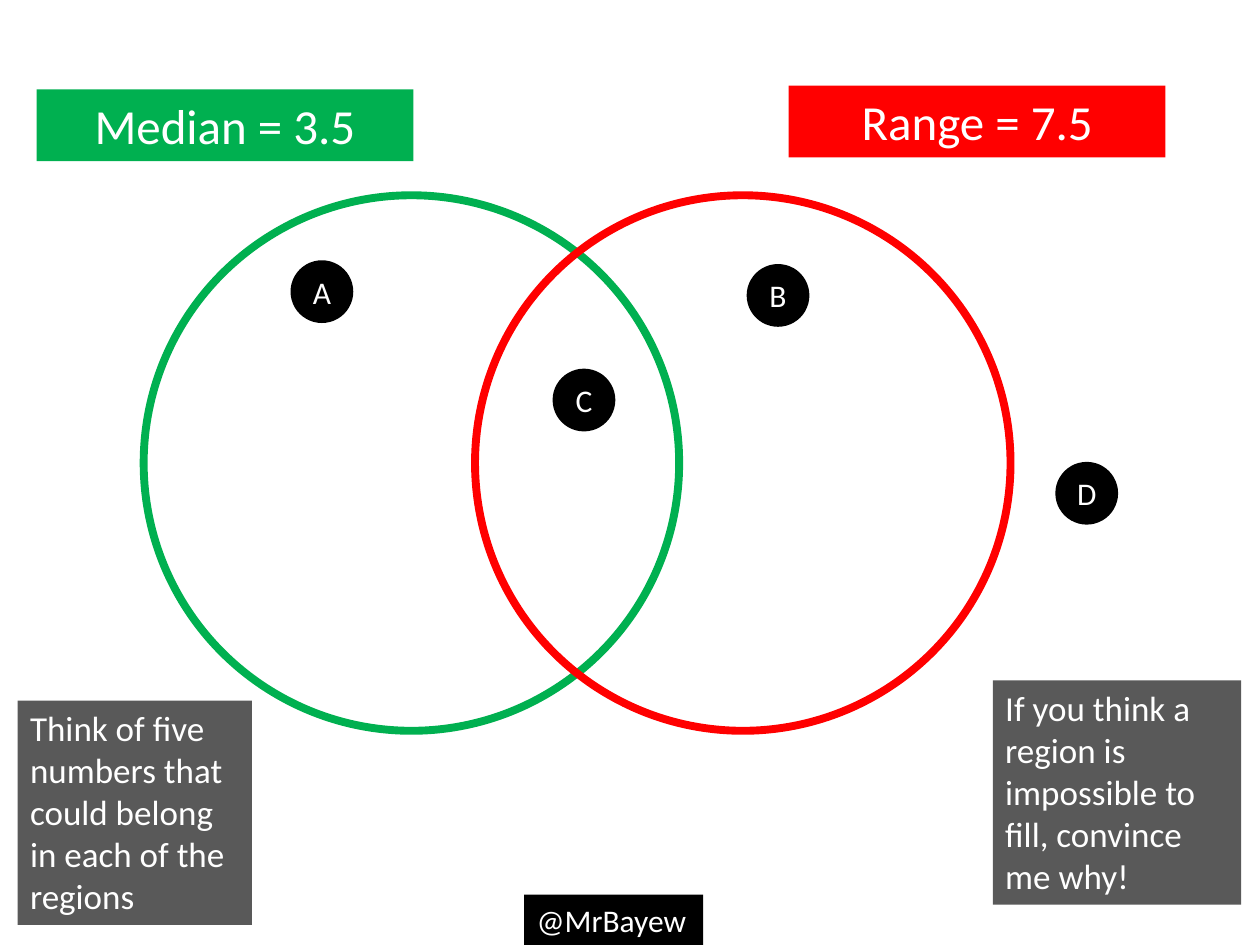
from collections import namedtuple

from pptx import Presentation
from pptx.dml.color import RGBColor
from pptx.enum.shapes import MSO_SHAPE
from pptx.enum.text import MSO_ANCHOR, MSO_AUTO_SIZE, PP_ALIGN
from pptx.util import Inches, Pt

WHITE = RGBColor(0xFF, 0xFF, 0xFF)
BLACK = RGBColor(0, 0, 0)
GREEN = RGBColor(0, 0xB0, 0x50)
RED = RGBColor(0xFF, 0, 0)
GREY = RGBColor(0x59, 0x59, 0x59)

# The slide is a grid of 100 columns by 75 rows of square cells.
COLUMNS, ROWS = 100, 75
CELL = Inches(0.1)
FONT = "Calibri"

Box = namedtuple("Box", "left top width height")


def to_lengths(box):
    return [round(value * CELL) for value in box]


def write_text(shape, text, size, alignment, wrap=True):
    frame = shape.text_frame
    frame.word_wrap = wrap
    frame.auto_size = MSO_AUTO_SIZE.SHAPE_TO_FIT_TEXT
    frame.vertical_anchor = MSO_ANCHOR.TOP
    paragraph = frame.paragraphs[0]
    paragraph.alignment = alignment
    run = paragraph.add_run()
    run.text = text
    run.font.name = FONT
    run.font.size = Pt(size)
    run.font.color.rgb = WHITE


def add_plain_shape(slide, kind, box, fill=None, line=None, line_width=0):
    shape = slide.shapes.add_shape(kind, *to_lengths(box))
    shape.shadow.inherit = False
    if fill is None:
        shape.fill.background()
    else:
        shape.fill.solid()
        shape.fill.fore_color.rgb = fill
    if line is None:
        shape.line.fill.background()
    else:
        shape.line.color.rgb = line
        shape.line.width = Pt(line_width)
    return shape


def add_label(slide, box, text, fill, size, alignment=PP_ALIGN.LEFT):
    """Add a filled rectangle that carries text."""
    shape = add_plain_shape(slide, MSO_SHAPE.RECTANGLE, box, fill)
    write_text(shape, text, size, alignment)


def add_set_circle(slide, box, color):
    add_plain_shape(slide, MSO_SHAPE.OVAL, box, line=color, line_width=4.5)


def add_region_marker(slide, box, letter):
    """Add a black disc with its letter in a text box centred on it."""
    add_plain_shape(slide, MSO_SHAPE.OVAL, box, BLACK, BLACK, 2)
    width, height = 3.6, 4
    letter_box = Box(box.left + (box.width - width) / 2,
                     box.top + (box.height - height) / 2, width, height)
    text_box = slide.shapes.add_textbox(*to_lengths(letter_box))
    write_text(text_box, letter, 18, PP_ALIGN.CENTER, wrap=False)


def add_venn_diagram(slide, box):
    """Draw two overlapping circles, each as tall as the box, and the markers."""
    diameter = box.height
    add_set_circle(slide, Box(box.left, box.top, diameter, diameter), GREEN)
    right_left = box.left + box.width - diameter
    add_set_circle(slide, Box(right_left, box.top, diameter, diameter), RED)

    marker_offsets = {"A": (11.8, 5.3), "B": (48, 5.6),
                      "C": (32.6, 13.9), "D": (72.5, 21.3)}
    for letter, (across, down) in marker_offsets.items():
        marker = Box(box.left + across, box.top + down, 4.7, 4.7)
        add_region_marker(slide, marker, letter)


def build_venn_slide(presentation):
    slide = presentation.slides.add_slide(presentation.slide_layouts[6])
    add_label(slide, Box(62.6, 6.8, 29.9, 5.7), "Range = 7.5",
              RED, 28, PP_ALIGN.CENTER)
    add_label(slide, Box(2.9, 7.1, 29.9, 5.7), "Median = 3.5",
              GREEN, 28, PP_ALIGN.CENTER)
    add_venn_diagram(slide, Box(11.4, 15.5, 68.8, 42.5))
    add_label(slide, Box(1.4, 55.6, 18.6, 17.8),
              "Think of five numbers that could belong in each of the regions",
              GREY, 20)
    add_label(slide, Box(78.8, 54, 19.7, 17.8),
              "If you think a region is impossible to fill, convince me why!",
              GREY, 20)
    add_label(slide, Box(41.6, 71, 14.2, 4), "@MrBayew", BLACK, 18)


def main():
    presentation = Presentation()
    presentation.slide_width = COLUMNS * CELL
    presentation.slide_height = ROWS * CELL
    build_venn_slide(presentation)
    presentation.save("out.pptx")


if __name__ == "__main__":
    main()
